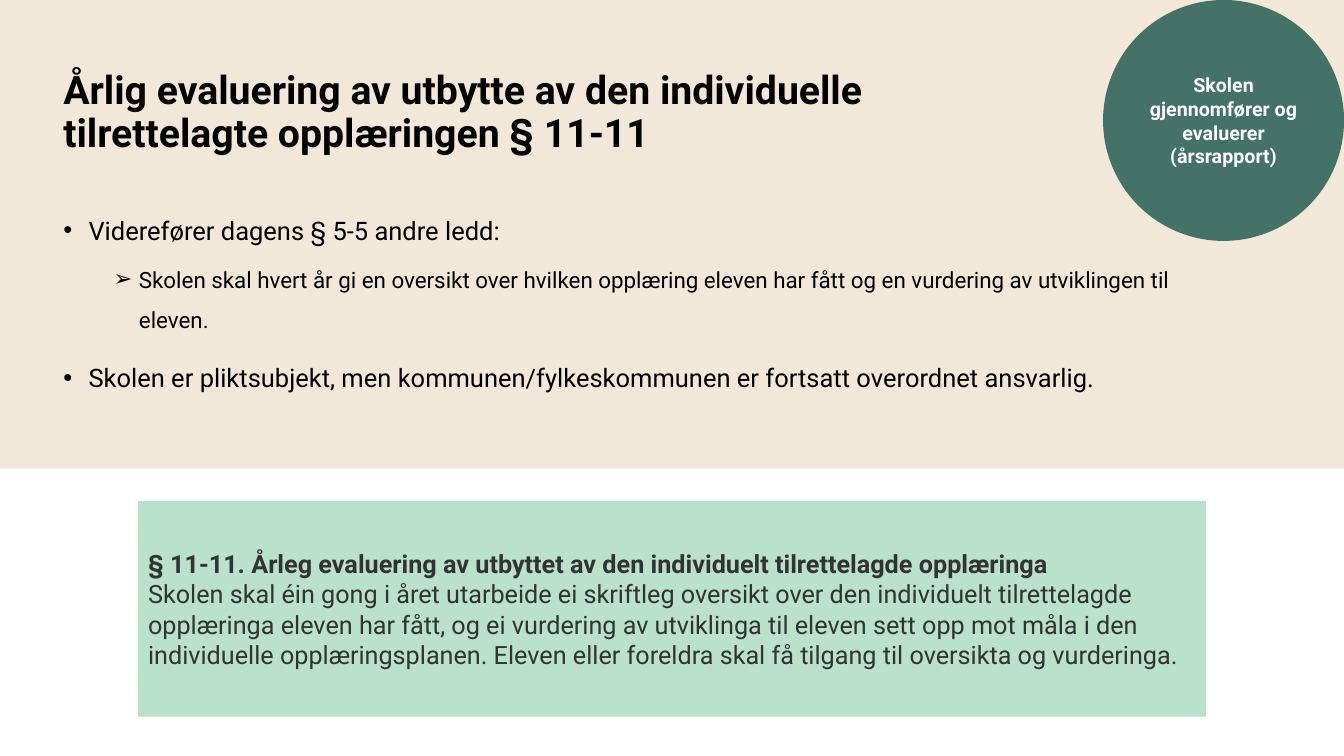
from lxml import etree
from pptx import Presentation
from pptx.dml.color import RGBColor
from pptx.enum.shapes import MSO_SHAPE
from pptx.enum.text import MSO_ANCHOR, PP_ALIGN
from pptx.oxml.ns import qn
from pptx.util import Inches, Pt

RECTANGLE = MSO_SHAPE.RECTANGLE
CIRCLE = MSO_SHAPE.FLOWCHART_CONNECTOR
MIDDLE = MSO_ANCHOR.MIDDLE
TOP = MSO_ANCHOR.TOP
LEFT = PP_ALIGN.LEFT
CENTER = PP_ALIGN.CENTER

FONT = "Roboto"
BLACK, WHITE, CHARCOAL = "000000", "FFFFFF", "333333"
SAND, GREEN, MINT = "F2E8DA", "447266", "B9E1CC"

TITLE = "Årlig evaluering av utbytte av den individuelle tilrettelagte opplæringen § 11-11"
POINTS = [
    (0, "Viderefører dagens § 5-5 andre ledd:"),
    (1, "Skolen skal hvert år gi en oversikt over hvilken opplæring eleven har fått "
        "og en vurdering av utviklingen til eleven."),
    (0, "Skolen er pliktsubjekt, men kommunen/fylkeskommunen er fortsatt overordnet ansvarlig."),
]
LEVELS = [("•", 0.25, 18.2, 10), ("➢", 0.75, 16, 5)]
STEP = "Skolen gjennomfører og evaluerer (årsrapport)"
LAW_HEADING = "§ 11-11. Årleg evaluering av utbyttet av den individuelt tilrettelagde opplæringa"
LAW_TEXT = (
    "Skolen skal éin gong i året utarbeide ei skriftleg oversikt over den individuelt "
    "tilrettelagde opplæringa eleven har fått, og ei vurdering av utviklinga til eleven "
    "sett opp mot måla i den individuelle opplæringsplanen. Eleven eller foreldra skal "
    "få tilgang til oversikta og vurderinga."
)


def color(value):
    return RGBColor.from_string(value)


def add_panel(slide, kind, box, fill):
    panel = slide.shapes.add_shape(kind, *map(Inches, box))
    panel.shadow.inherit = False
    panel.fill.solid()
    panel.fill.fore_color.rgb = color(fill)
    panel.line.fill.background()
    return prepare_frame(panel, MIDDLE)


def add_text_area(slide, box, anchor):
    return prepare_frame(slide.shapes.add_textbox(*map(Inches, box)), anchor)


def prepare_frame(holder, anchor):
    frame = holder.text_frame
    frame.word_wrap = True
    frame.vertical_anchor = anchor
    return frame


def write(paragraph, text, size, ink, bold=False, align=LEFT):
    paragraph.alignment = align
    run = paragraph.add_run()
    run.text = text
    run.font.name = FONT
    run.font.size = Pt(size)
    run.font.bold = bold
    run.font.color.rgb = color(ink)


def set_bullet(paragraph, mark, indent):
    properties = paragraph._p.get_or_add_pPr()
    properties.set("marL", str(Inches(indent)))
    properties.set("indent", str(Inches(-0.25)))
    etree.SubElement(properties, qn("a:buFont")).set("typeface", "Arial")
    etree.SubElement(properties, qn("a:buChar")).set("char", mark)


def add_points(frame):
    for index, (level, text) in enumerate(POINTS):
        mark, indent, size, space = LEVELS[level]
        point = frame.add_paragraph() if index else frame.paragraphs[0]
        point.level = level
        point.line_spacing = 1.5
        point.space_before = Pt(space)
        set_bullet(point, mark, indent)
        write(point, text, size, BLACK)


def main():
    deck = Presentation()
    deck.slide_width, deck.slide_height = Inches(13.33), Inches(7.5)
    slide = deck.slides.add_slide(deck.slide_layouts[6])

    add_panel(slide, RECTANGLE, (0, 0, 13.33, 4.65), SAND)

    title = add_text_area(slide, (0.53, 0.4, 9.88, 1.45), MIDDLE).paragraphs[0]
    title.line_spacing = 0.9
    write(title, TITLE, 28, BLACK, bold=True)

    add_points(add_text_area(slide, (0.53, 1.93, 11.5, 2.46), TOP))

    step = add_panel(slide, CIRCLE, (10.94, 0, 2.39, 2.39), GREEN)
    write(step.paragraphs[0], STEP, 14, WHITE, bold=True, align=CENTER)

    law = add_panel(slide, RECTANGLE, (1.37, 4.97, 10.59, 2.14), MINT)
    write(law.paragraphs[0], LAW_HEADING, 18, CHARCOAL, bold=True)
    write(law.add_paragraph(), LAW_TEXT, 18, CHARCOAL)

    deck.save("out.pptx")


if __name__ == "__main__":
    main()
